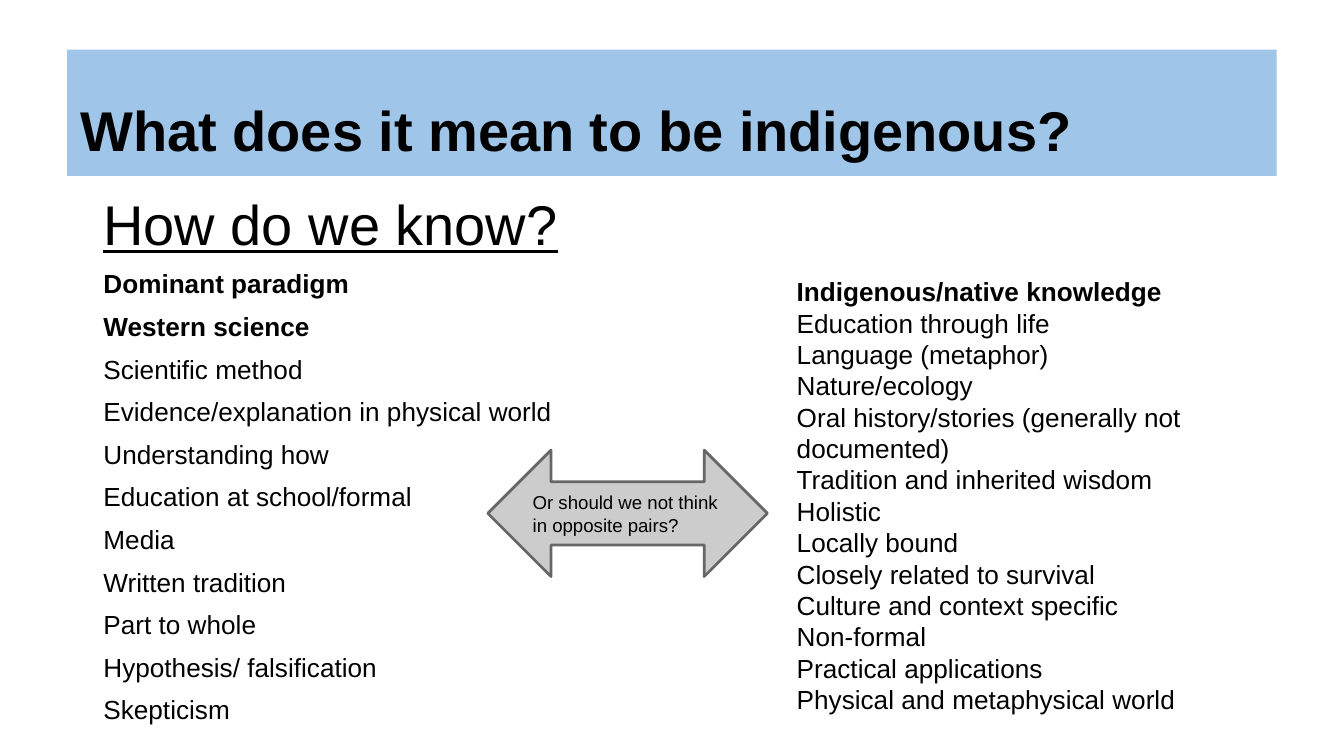
from pptx import Presentation
from pptx.dml.color import RGBColor
from pptx.enum.shapes import MSO_SHAPE
from pptx.enum.text import MSO_ANCHOR, PP_ALIGN
from pptx.util import Inches, Pt

RECTANGLE = MSO_SHAPE.RECTANGLE
DOUBLE_ARROW = MSO_SHAPE.LEFT_RIGHT_ARROW
TOP, MIDDLE, BOTTOM = MSO_ANCHOR.TOP, MSO_ANCHOR.MIDDLE, MSO_ANCHOR.BOTTOM
LEFT = PP_ALIGN.LEFT

FONT = "Arial"
COLORS = {"text": "000000", "banner": "9FC5E8", "arrow": "CCCCCC", "outline": "666666"}
INSET = 0.1
BODY_SIZE = 14

WESTERN_HEADINGS = ["Dominant paradigm", "Western science"]
WESTERN_POINTS = [
    "Scientific method",
    "Evidence/explanation in physical world",
    "Understanding how",
    "Education at school/formal",
    "Media",
    "Written tradition",
    "Part to whole",
    "Hypothesis/ falsification",
    "Skepticism",
]
INDIGENOUS_HEADING = "Indigenous/native knowledge"
INDIGENOUS_POINTS = [
    "Education through life",
    "Language (metaphor)",
    "Nature/ecology",
    "Oral history/stories (generally not documented)",
    "Tradition and inherited wisdom",
    "Holistic",
    "Locally bound",
    "Closely related to survival",
    "Culture and context specific",
    "Non-formal",
    "Practical applications",
    "Physical and metaphysical world",
]


def color(name):
    """Return the named palette colour."""
    return RGBColor.from_string(COLORS[name])


def write_lines(frame, lines, anchor=TOP, indent=0, space_before=0):
    """Fill a text frame with (text, size, bold, underline) lines."""
    frame.word_wrap = True
    frame.vertical_anchor = anchor
    frame.margin_left = Inches(INSET + indent)
    frame.margin_right = frame.margin_top = frame.margin_bottom = Inches(INSET)
    for index, (text, size, bold, underline) in enumerate(lines):
        line = frame.add_paragraph() if index else frame.paragraphs[0]
        line.text = text
        line.alignment = LEFT
        line.space_before = Pt(space_before)
        line.font.name = FONT
        line.font.size = Pt(size)
        line.font.bold = bold
        line.font.underline = underline
        line.font.color.rgb = color("text")


def add_filled_shape(slide, kind, box, fill):
    """Add a flat preset shape without an outline."""
    shape = slide.shapes.add_shape(kind, *map(Inches, box))
    shape.shadow.inherit = False
    shape.fill.solid()
    shape.fill.fore_color.rgb = color(fill)
    shape.line.fill.background()
    return shape


def add_title_banner(slide, box):
    """Add the title on its blue band."""
    banner = add_filled_shape(slide, RECTANGLE, box, "banner")
    title = ("What does it mean to be indigenous?", 30, True, False)
    write_lines(banner.text_frame, [title], BOTTOM)


def add_western_column(slide, box):
    """Add the question and the list on Western science."""
    column = slide.shapes.add_textbox(*map(Inches, box))
    lines = [("How do we know?", 30, False, True)]
    lines += [(text, BODY_SIZE, True, False) for text in WESTERN_HEADINGS]
    lines += [(text, BODY_SIZE, False, False) for text in WESTERN_POINTS]
    write_lines(column.text_frame, lines, indent=0.21, space_before=6)


def add_opposites_arrow(slide, box):
    """Add the double arrow between the two lists."""
    arrow = add_filled_shape(slide, DOUBLE_ARROW, box, "arrow")
    arrow.line.color.rgb = color("outline")
    arrow.line.width = Pt(1.5)
    question = ("Or should we not think in opposite pairs?", 10, False, False)
    write_lines(arrow.text_frame, [question], MIDDLE)


def add_indigenous_column(slide, box):
    """Add the list on indigenous knowledge."""
    column = slide.shapes.add_textbox(*map(Inches, box))
    lines = [(INDIGENOUS_HEADING, BODY_SIZE, True, False)]
    lines += [(text, BODY_SIZE, False, False) for text in INDIGENOUS_POINTS]
    write_lines(column.text_frame, lines)


def main():
    """Build and save the slide."""
    deck = Presentation()
    deck.slide_width = Inches(10)
    deck.slide_height = deck.slide_width * 9 // 16
    slide = deck.slides.add_slide(deck.slide_layouts[6])
    add_title_banner(slide, (0.5, 0.37, 9, 0.94))
    add_western_column(slide, (0.46, 1.31, 9, 4.26))
    add_opposites_arrow(slide, (3.63, 3.35, 2.08, 0.94))
    add_indigenous_column(slide, (5.83, 1.95, 4.06, 3.62))
    deck.save("out.pptx")


if __name__ == "__main__":
    main()
